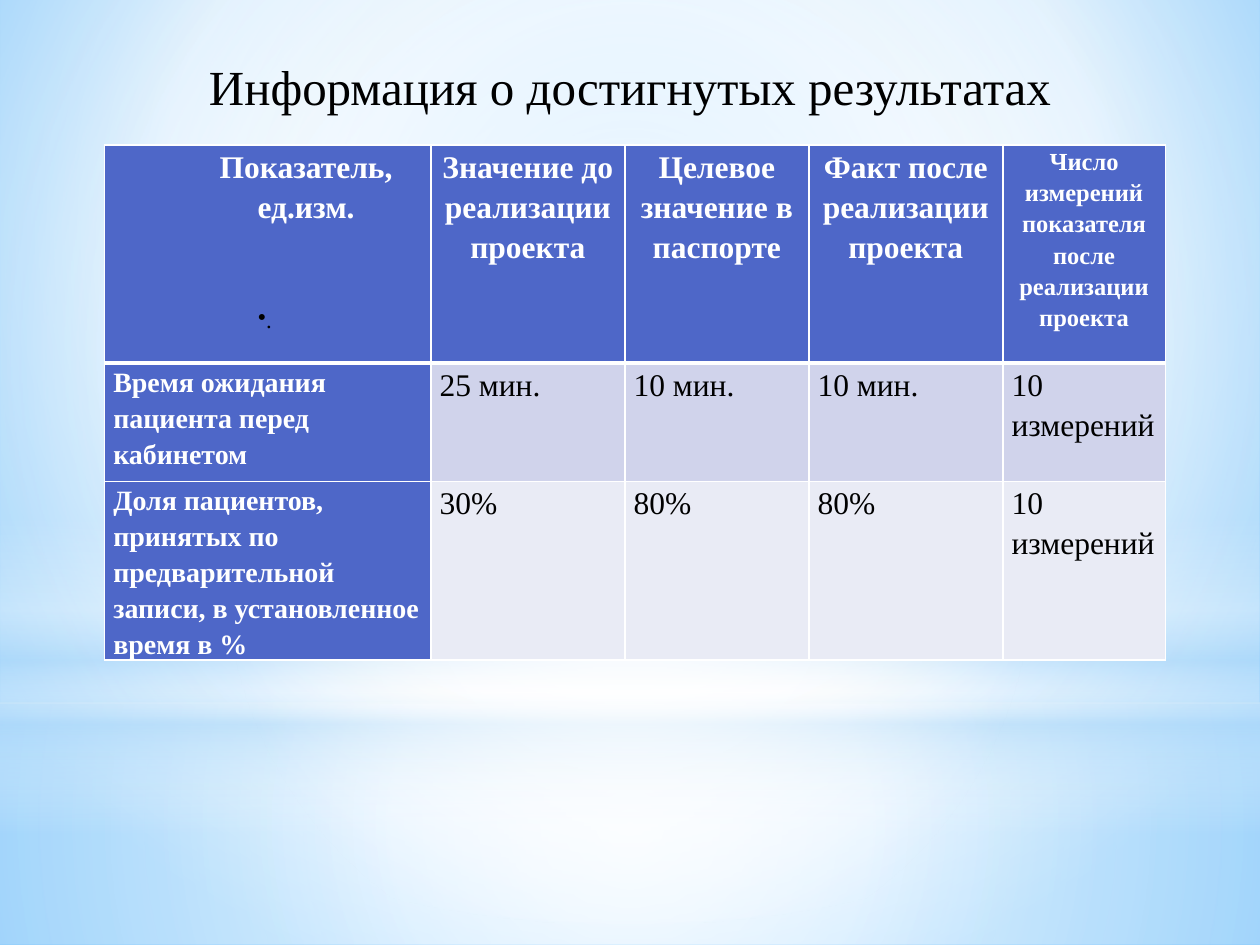
from lxml import etree
from pptx import Presentation
from pptx.dml.color import RGBColor
from pptx.enum.shapes import MSO_SHAPE
from pptx.enum.text import MSO_ANCHOR, PP_ALIGN
from pptx.oxml.ns import qn
from pptx.util import Emu, Inches, Pt

RECTANGLE, OVAL = MSO_SHAPE.RECTANGLE, MSO_SHAPE.OVAL
CENTER, LEFT = PP_ALIGN.CENTER, PP_ALIGN.LEFT
FONT = "Times New Roman"
COLORS = {"white": "FFFFFF", "black": "000000", "haze": "B4DCFA",
          "sky": "9ED5FF", "deep_sky": "5BB9FF", "header": "4E67C8",
          "band_dark": "D0D3EB", "band_light": "E9EBF5"}


def set_gradient(fill, element, stops, focus=None):
    """Stops are (position, color, opacity) in percent; focus is l, t, r, b."""
    fill.gradient()
    gradient = element.find(".//" + qn("a:gradFill"))
    for child in list(gradient):
        gradient.remove(child)
    stop_list = etree.SubElement(gradient, qn("a:gsLst"))
    for position, color, opacity in stops:
        stop = etree.SubElement(stop_list, qn("a:gs"), pos=str(position * 1000))
        tint = etree.SubElement(stop, qn("a:srgbClr"), val=COLORS[color])
        if opacity < 100:
            etree.SubElement(tint, qn("a:alpha"), val=str(opacity * 1000))
    if focus:
        circle = etree.SubElement(gradient, qn("a:path"), path="circle")
        sides = {side: str(share * 1000) for side, share in zip("ltrb", focus)}
        etree.SubElement(circle, qn("a:fillToRect"), **sides)
    else:
        etree.SubElement(gradient, qn("a:lin"), ang="5400000", scaled="0")


def format_paragraph(paragraph, size, color, bold=False, align=LEFT):
    paragraph.alignment = align
    paragraph.font.name = FONT
    paragraph.font.size = Pt(size)
    paragraph.font.bold = bold
    paragraph.font.color.rgb = RGBColor.from_string(COLORS[color])


presentation = Presentation()
presentation.slide_width, presentation.slide_height = Inches(10), Inches(7.5)
slide = presentation.slides.add_slide(presentation.slide_layouts[5])

# Background and its layers of light
set_gradient(slide.background.fill, slide.element,
             [(0, "sky", 100), (60, "white", 100), (100, "deep_sky", 100)],
             (20, 10, 20, 60))
MIDDLE = (50, 50, 50, 50)
light_layers = [
    (RECTANGLE, 5.58, 1.92, MIDDLE,
     [(0, "white", 91), (37, "white", 76), (100, "haze", 79)]),
    (RECTANGLE, 0, 5.58, MIDDLE,
     [(0, "white", 89), (48, "white", 62), (100, "haze", 79)]),
    (RECTANGLE, 4.12, 2.5, None,
     [(0, "white", 0), (29, "white", 30), (45, "haze", 40),
      (55, "white", 26), (65, "haze", 60), (100, "white", 0)]),
    (OVAL, 1.75, 5.58, MIDDLE, [(0, "white", 100), (56, "white", 0)]),
]
for kind, top, height, focus, stops in light_layers:
    layer = slide.shapes.add_shape(kind, 0, Inches(top),
                                   presentation.slide_width, Inches(height))
    layer.shadow.inherit = False
    layer.line.fill.background()
    set_gradient(layer.fill, layer.element, stops, focus)

# Title, in front of the layers
title = slide.shapes.title
title.left, title.top = Inches(0.5), Inches(0.29)
title.width, title.height = Inches(9), Inches(0.79)
title.text_frame.text = "Информация о достигнутых результатах"
format_paragraph(title.text_frame.paragraphs[0], 28, "black", align=CENTER)
slide.shapes.element.append(title.element)

# Results table
rows = [
    ["Показатель, ед.изм.", "Значение до реализации проекта",
     "Целевое значение в паспорте", "Факт после реализации проекта",
     "Число измерений показателя после реализации проекта"],
    ["Время ожидания пациента перед кабинетом",
     "25 мин.", "10 мин.", "10 мин.", "10 измерений"],
    ["Доля пациентов, принятых по предварительной записи, "
     "в установленное время в %", "30%", "80%", "80%", "10 измерений"],
]
column_widths = [2.59, 1.54, 1.46, 1.54, 1.29]
row_heights = [1.73, 0.94, 1.42]
row_fills = ["header", "band_dark", "band_light"]
table = slide.shapes.add_table(
    len(rows), len(column_widths), Inches(0.83), Inches(1.15),
    Inches(sum(column_widths)), Inches(sum(row_heights))).table
for column, width in zip(table.columns, column_widths):
    column.width = Inches(width)

for r, texts in enumerate(rows):
    table.rows[r].height = Inches(row_heights[r])
    for c, text in enumerate(texts):
        cell = table.cell(r, c)
        is_header, is_label = r == 0, c == 0
        strong = is_header or is_label

        # Borders come before the fill; the rule under the header is thicker
        properties = cell._tc.get_or_add_tcPr()
        for side in "LRTB":
            thick = (r, side) in [(0, "B"), (1, "T")]
            line = etree.SubElement(properties, qn("a:ln" + side),
                                    w=str(Pt(3 if thick else 1)))
            solid = etree.SubElement(line, qn("a:solidFill"))
            etree.SubElement(solid, qn("a:srgbClr"), val=COLORS["white"])
        cell.fill.solid()
        cell.fill.fore_color.rgb = RGBColor.from_string(
            COLORS["header" if strong else row_fills[r]])

        cell.margin_left = cell.margin_right = Inches(0.07)
        cell.margin_top = cell.margin_bottom = Emu(0)
        cell.text = text
        paragraph = cell.text_frame.paragraphs[0]
        paragraph.line_spacing = 1.15
        if is_header:
            size = 14 if c == len(texts) - 1 else 18
        else:
            size = 16 if is_label else 18
        format_paragraph(paragraph, size, "white" if strong else "black",
                         strong, CENTER if is_header else LEFT)
        if is_header and is_label:
            paragraph._p.get_or_add_pPr().set("marL", str(Inches(0.61)))

# Bullet point in the first header cell
note = slide.shapes.add_textbox(Inches(1.68), Inches(2.38),
                                Inches(0.52), Inches(0.62)).text_frame
note.word_wrap = False
note.vertical_anchor = MSO_ANCHOR.TOP
note.text = "."
format_paragraph(note.paragraphs[0], 13, "black")
bullet_properties = note.paragraphs[0]._p.get_or_add_pPr()
bullet_properties.set("marL", "0")
bullet_properties.set("indent", str(Inches(0.27)))
bullet = etree.Element(qn("a:buChar"), char="•")
bullet_properties.insert(0, bullet)

presentation.save("out.pptx")
